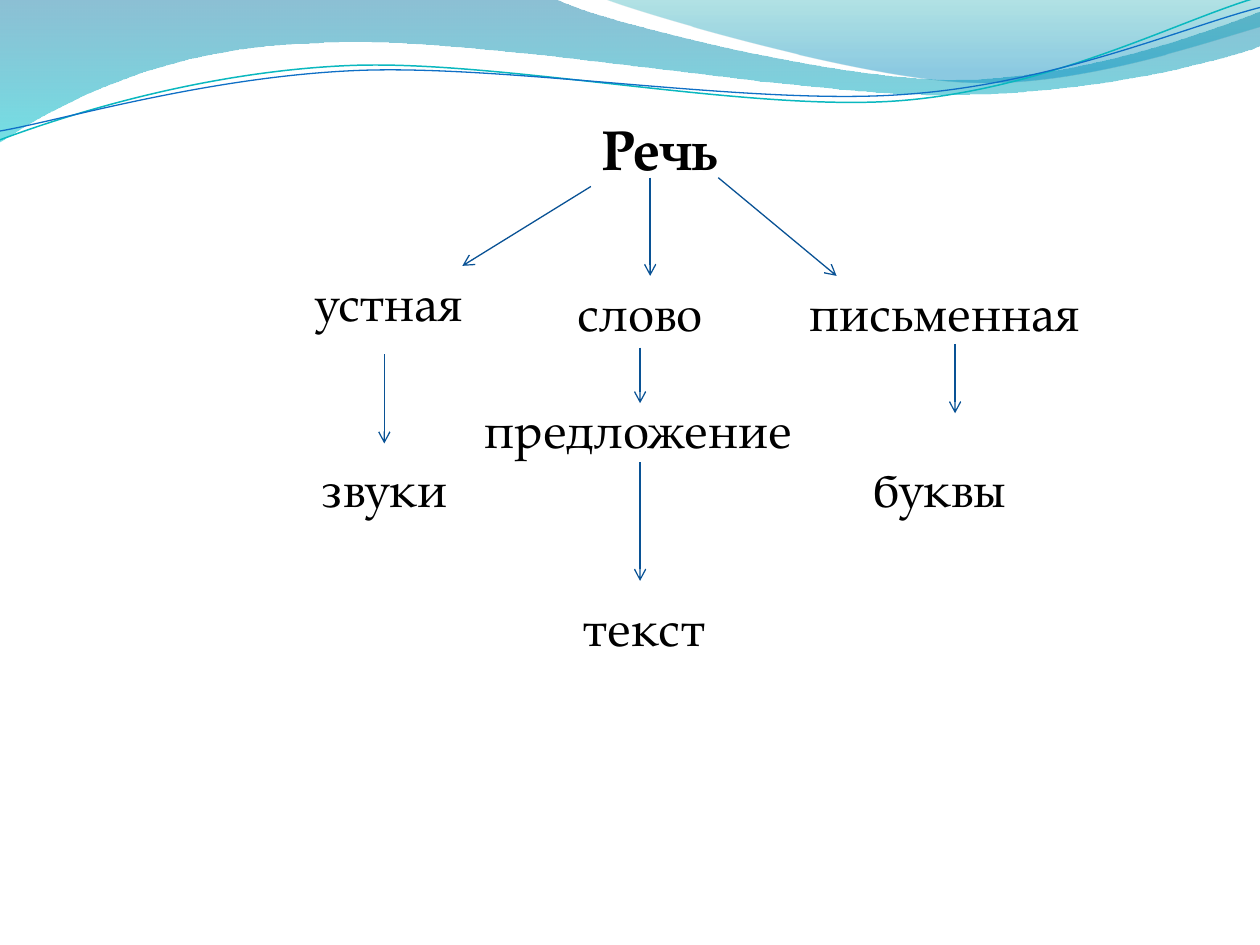
from itertools import chain
from math import cos, radians, sin
from lxml.etree import SubElement
from pptx import Presentation
from pptx.dml.color import RGBColor
from pptx.enum.shapes import MSO_CONNECTOR
from pptx.enum.text import MSO_AUTO_SIZE, PP_ALIGN
from pptx.oxml.ns import qn
from pptx.util import Inches, Pt

COLORS = {
    "text": "000000",
    "arrow": "095295",
    "wave_top": "0074A1",
    "wave_bottom": "00C6CF",
    "crest_top": "00A1A9",
    "crest_bottom": "008BBF",
    "teal_line": "0AB8BF",
    "blue_line": "0F6FC6",
}


def color(name):
    return RGBColor.from_string(COLORS[name])


def turn(point, center, degrees):
    angle = radians(degrees)
    x, y = point[0] - center[0], point[1] - center[1]
    return (center[0] + x * cos(angle) - y * sin(angle),
            center[1] + x * sin(angle) + y * cos(angle))


class SpeechSlide:
    font = "TeX Gyre Pagella"
    arrow_width = 0.75
    ripple_tilt = -2.7

    def __init__(self, slide):
        self.shapes = slide.shapes

    def outline(self, start, segments, close):
        corners = [(Inches(x), Inches(y)) for x, y in chain([start], *segments)]
        builder = self.shapes.build_freeform(*corners[0])
        builder.add_line_segments(corners[1:], close=close)
        shape = builder.convert_to_shape()
        shape.shadow.inherit = False
        contour = shape._element.find(".//" + qn("a:path"))
        lines = iter(contour.findall(qn("a:lnTo")))
        for segment in segments:
            pieces = [next(lines) for _ in segment]
            if len(pieces) == 3:
                bend = SubElement(contour, qn("a:cubicBezTo"))
                pieces[0].addprevious(bend)
                for piece in pieces:
                    bend.append(piece[0])
                    contour.remove(piece)
        return shape

    def wave(self, start, segments, stops):
        shape = self.outline(start, segments, True)
        shape.line.fill.background()
        shape.fill.gradient()
        shape.fill.gradient_angle = 270
        for stop, (position, name, _) in zip(shape.fill.gradient_stops, stops):
            stop.position = position
            stop.color.rgb = color(name)
        for tint, (_, _, opacity) in zip(shape._element.spPr.iter(qn("a:srgbClr")), stops):
            SubElement(tint, qn("a:alpha"), val=str(opacity * 1000))

    def ripple(self, start, segments, center, name, width):
        def level(point):
            return turn(point, center, -self.ripple_tilt)

        shape = self.outline(level(start), [[level(p) for p in s] for s in segments], False)
        shape.rotation = self.ripple_tilt
        shape.fill.background()
        shape.line.color.rgb = color(name)
        shape.line.width = Pt(width)

    def label(self, words, left, top, width, height=0.57, size=28,
              bold=False, align=PP_ALIGN.CENTER):
        box = self.shapes.add_textbox(*map(Inches, (left, top, width, height)))
        frame = box.text_frame
        frame.word_wrap = True
        frame.auto_size = MSO_AUTO_SIZE.SHAPE_TO_FIT_TEXT
        paragraph = frame.paragraphs[0]
        paragraph.alignment = align
        run = paragraph.add_run()
        run.text = words
        run.font.name = self.font
        run.font.size = Pt(size)
        run.font.bold = bold
        run.font.color.rgb = color("text")
        return box

    def arrow(self, start, end, source=None):
        connector = self.shapes.add_connector(
            MSO_CONNECTOR.STRAIGHT, *map(Inches, start + end))
        if source is not None:
            connector.begin_connect(source, 2)
        connector.line.color.rgb = color("arrow")
        connector.line.width = Pt(self.arrow_width)
        SubElement(connector.line._get_or_add_ln(), qn("a:tailEnd"), type="arrow")
        SubElement(connector._element.spPr, qn("a:effectLst"))


def main():
    deck = Presentation()
    deck.slide_width, deck.slide_height = Inches(10), Inches(7.5)
    page = SpeechSlide(deck.slides.add_slide(deck.slide_layouts[6]))

    page.wave((0, 0), [
        [(4.4, -0.01)],
        [(4.76, 0.17), (6.64, 0.63), (7.58, 0.63)],
        [(8.53, 0.63), (9.58, 0.26), (10, 0.09)],
        [(10.01, 0.36)],
        [(9.83, 0.44), (8.7, 0.76), (7.46, 0.75)],
        [(6.22, 0.75), (3.82, 0.28), (2.57, 0.34)],
        [(1.29, 0.36), (0.46, 0.83), (-0.01, 1.13)],
        [(0, 0)],
    ], [(0, "wave_top", 45), (1, "wave_bottom", 55)])
    page.wave((4.79, -0.01), [
        [(5.09, 0.11), (6.82, 0.62), (7.69, 0.65)],
        [(8.56, 0.69), (9.61, 0.32), (10, 0.21)],
        [(10, 0)],
        [(4.79, -0.01)],
    ], [(0, "crest_top", 30), (0.8, "crest_bottom", 45)])
    page.ripple((0, 1.11), [
        [(0.48, 0.93), (1.58, 0.57), (2.77, 0.52)],
        [(3.95, 0.47), (5.93, 0.89), (7.13, 0.8)],
        [(8.33, 0.71), (9.38, 0.15), (9.98, -0.02)],
    ], (4.99, 0.58), "teal_line", 0.85)
    page.ripple((0, 1.04), [
        [(0.47, 0.96), (1.64, 0.61), (2.83, 0.56)],
        [(4.03, 0.51), (5.97, 0.84), (7.17, 0.75)],
        [(8.36, 0.67), (9.41, 0.21), (10, 0.06)],
    ], (5, 0.59), "blue_line", 0.75)

    page.label("Речь", 2.89, 0.86, 4.69, 0.64, size=32, bold=True)
    page.arrow((5.7, 1.41), (6.64, 2.19))
    page.arrow((4.69, 1.48), (3.67, 2.11))
    page.label("устная", 2.19, 2.11, 1.8)
    page.label("письменная", 6.33, 2.19, 2.5, align=PP_ALIGN.LEFT)
    page.arrow((5.16, 1.41), (5.16, 2.19))
    word = page.label("слово", 4.45, 2.19, 1.26)
    page.arrow((5.08, 2.76), (5.08, 3.2), source=word)
    page.arrow((7.58, 2.73), (7.58, 3.28))
    page.arrow((3.05, 2.81), (3.05, 3.52))
    page.label("буквы", 6.64, 3.59, 1.64)
    page.label("предложение", 3.75, 3.12, 2.89, align=PP_ALIGN.LEFT)
    page.label("звуки", 2.19, 3.59, 1.72)
    page.arrow((5.08, 3.67), (5.08, 4.61))
    page.label("текст", 3.75, 4.69, 2.73)

    deck.save("out.pptx")


if __name__ == "__main__":
    main()
